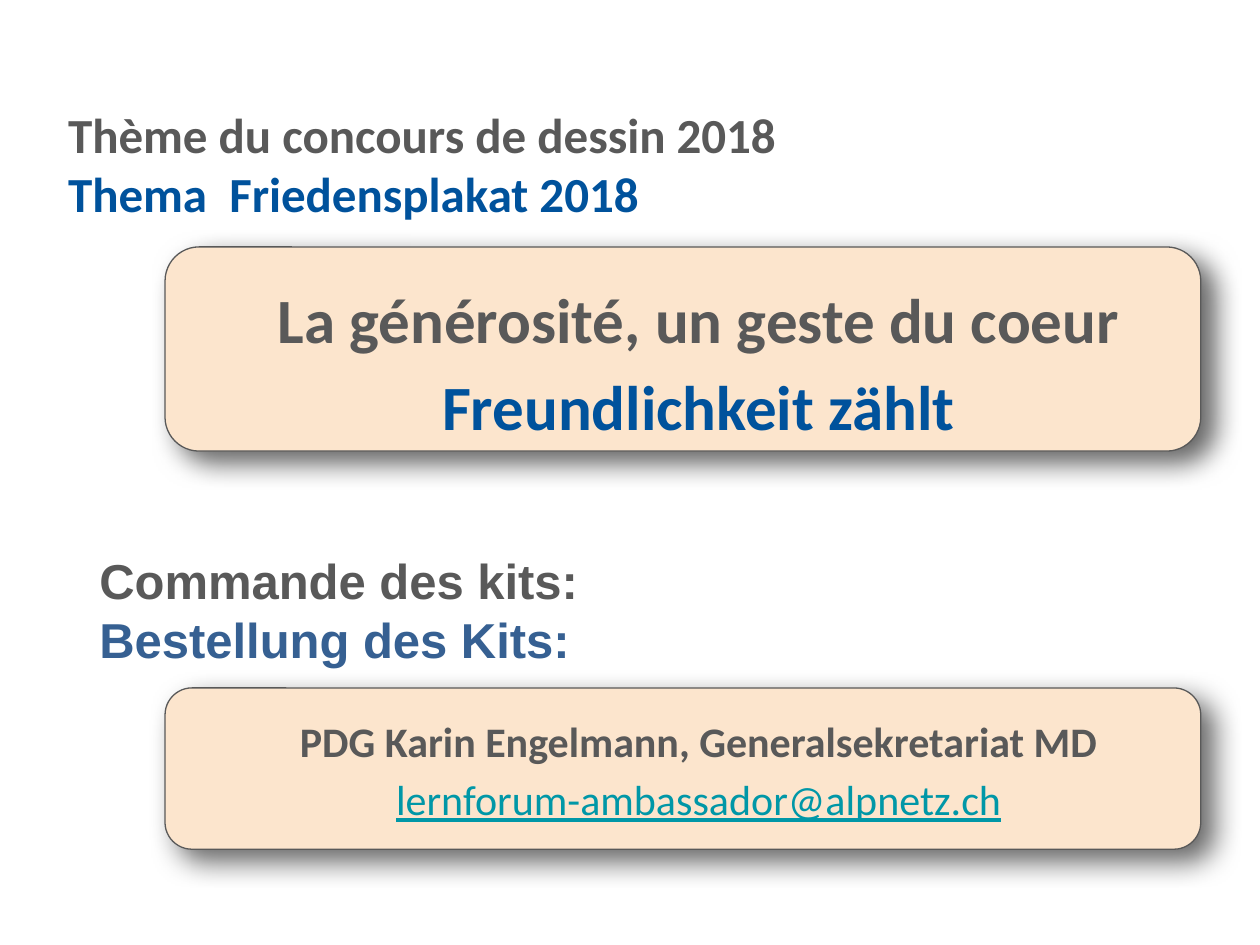
from dataclasses import dataclass

from lxml.etree import SubElement
from pptx import Presentation
from pptx.dml.color import RGBColor
from pptx.enum.shapes import MSO_SHAPE
from pptx.enum.text import MSO_ANCHOR, MSO_AUTO_SIZE, PP_ALIGN
from pptx.oxml.ns import qn
from pptx.util import Inches, Pt


@dataclass(frozen=True)
class Theme:
    grey: str = "595959"
    blue: str = "00529C"
    soft_blue: str = "366092"
    teal: str = "0097A7"
    sand: str = "FCE5CD"
    shadow: str = "000000"
    heading_size: int = 28
    motto_size: int = 36
    contact_size: int = 24
    body_font: str = "Calibri"
    order_font: str = "Arial"


THEME = Theme()
CARD_LEFT, CARD_WIDTH = 1.31, 8.22


def style_run(run, font, size, color, bold=True, underline=None):
    run.font.name = font
    run.font.size = Pt(size)
    run.font.bold = bold
    run.font.underline = underline
    run.font.color.rgb = RGBColor.from_string(color)


def place_heading(heading, left, top, width, height, text, font, colors):
    heading.left, heading.top = Inches(left), Inches(top)
    heading.width, heading.height = Inches(width), Inches(height)
    frame = heading.text_frame
    frame.word_wrap = True
    frame.auto_size = MSO_AUTO_SIZE.NONE
    frame.vertical_anchor = MSO_ANCHOR.MIDDLE
    frame.text = text
    for paragraph in frame.paragraphs:
        paragraph.alignment = PP_ALIGN.LEFT
    runs = [run for paragraph in frame.paragraphs for run in paragraph.runs]
    for run, color in zip(runs, colors):
        style_run(run, font, THEME.heading_size, color)


def cast_shadow(card):
    effects = SubElement(card.element.spPr, qn("a:effectLst"))
    shadow = SubElement(effects, qn("a:outerShdw"), blurRad=str(Pt(15.8)),
                        dist=str(Pt(9)), dir=str(40 * 60000),
                        algn="bl", rotWithShape="0")
    color = SubElement(shadow, qn("a:srgbClr"), val=THEME.shadow)
    SubElement(color, qn("a:alpha"), val="60000")


def add_card(slide, top, height, text, size):
    card = slide.shapes.add_shape(
        MSO_SHAPE.ROUNDED_RECTANGLE, Inches(CARD_LEFT), Inches(top),
        Inches(CARD_WIDTH), Inches(height))
    card.fill.solid()
    card.fill.fore_color.rgb = RGBColor.from_string(THEME.sand)
    card.line.color.rgb = RGBColor.from_string(THEME.grey)
    card.line.width = Pt(0.75)
    cast_shadow(card)

    frame = card.text_frame
    frame.word_wrap = True
    frame.vertical_anchor = MSO_ANCHOR.TOP
    frame.margin_left = frame.margin_right = Inches(0.1)
    frame.margin_top = frame.margin_bottom = Inches(0.1)
    frame.text = text
    for paragraph in frame.paragraphs:
        paragraph.alignment = PP_ALIGN.CENTER
        paragraph.line_spacing = 1.15
        properties = paragraph._p.get_or_add_pPr()
        properties.set("marL", str(Inches(0.25)))
        properties.set("indent", "0")
        style_run(paragraph.runs[0], THEME.body_font, size, THEME.grey)
    frame.paragraphs[-1].space_after = Pt(16)
    return frame.paragraphs[-1].runs[0]


def main():
    deck = Presentation()
    deck.slide_width, deck.slide_height = Inches(10), Inches(7.5)
    slide = deck.slides.add_slide(deck.slide_layouts[5])

    order_heading = slide.shapes.add_textbox(0, 0, 0, 0)
    place_heading(order_heading, 0.69, 4.45, 7.52, 0.77,
                  "Commande des kits:\nBestellung des Kits:",
                  THEME.order_font, (THEME.grey, THEME.soft_blue))
    place_heading(slide.shapes.title, 0.44, 0.95, 7.52, 0.69,
                  "Thème du concours de dessin 2018\vThema  Friedensplakat 2018",
                  THEME.body_font, (THEME.grey, THEME.blue))

    german_motto = add_card(
        slide, 1.96, 1.62,
        "La générosité, un geste du coeur\nFreundlichkeit zählt",
        THEME.motto_size)
    style_run(german_motto, THEME.body_font, THEME.motto_size, THEME.blue)

    email = add_card(
        slide, 5.46, 1.28,
        "PDG Karin Engelmann, Generalsekretariat MD\n"
        "lernforum-ambassador@alpnetz.ch",
        THEME.contact_size)
    style_run(email, THEME.body_font, THEME.contact_size, THEME.teal,
              bold=False, underline=True)

    deck.save("out.pptx")


if __name__ == "__main__":
    main()
